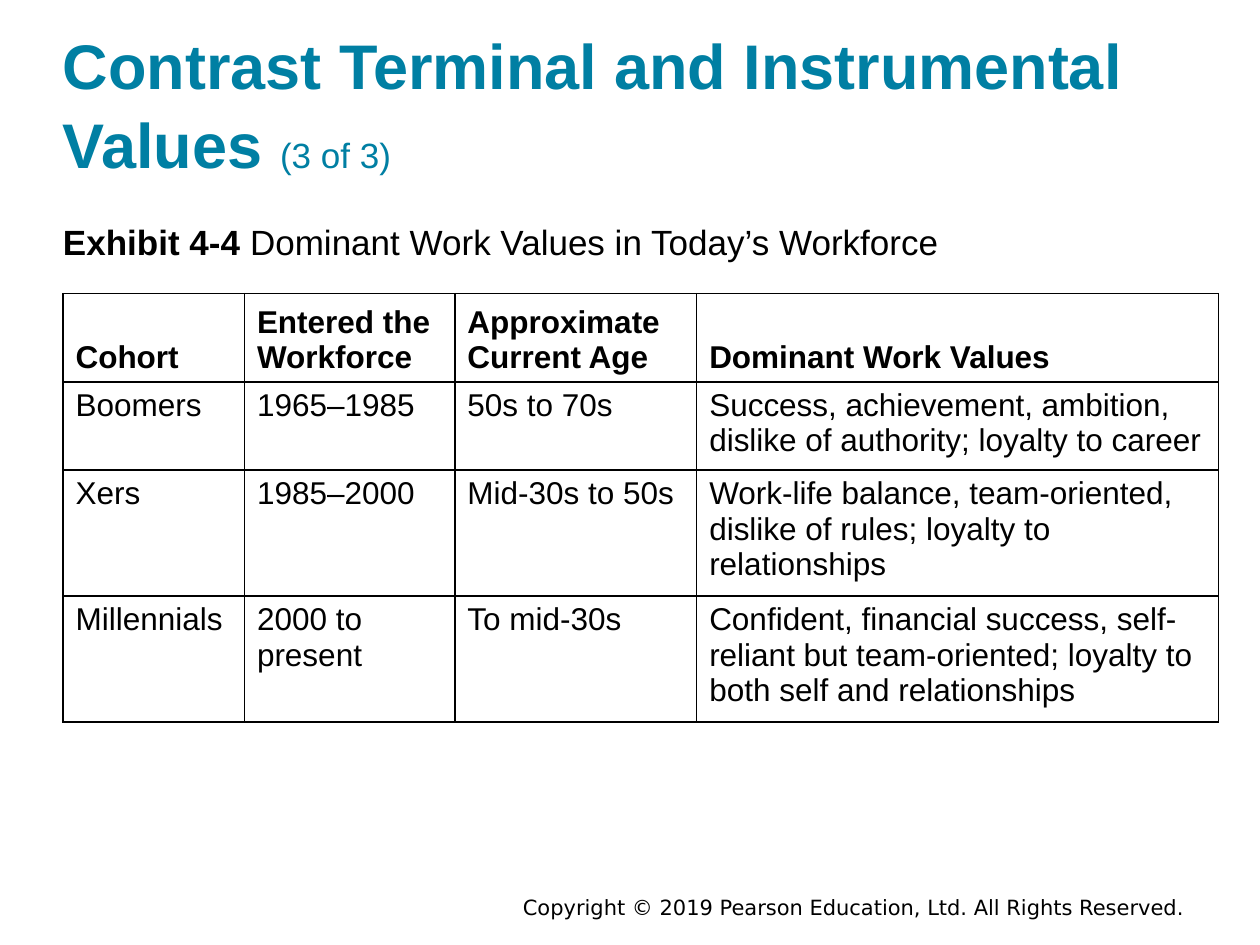
from dataclasses import dataclass

from lxml.etree import SubElement as Sub
from pptx import Presentation
from pptx.dml.color import RGBColor as Rgb
from pptx.enum.text import MSO_ANCHOR as Anchor, PP_ALIGN as Align
from pptx.oxml.ns import qn
from pptx.util import Inches, Pt

COLORS = {"title": "007FA3", "text": "000000", "border": "000000"}
COLS = (1.44, 1.67, 1.92, 4.14)
ROW = 0.41
ROWS = (
    ("Cohort", "Entered the Workforce", "Approximate Current Age",
     "Dominant Work Values"),
    ("Boomers", "1965–1985", "50s to 70s",
     "Success, achievement, ambition, dislike of authority; loyalty to career"),
    ("Xers", "1985–2000", "Mid-30s to 50s",
     "Work-life balance, team-oriented, dislike of rules; "
     "loyalty to relationships"),
    ("Millennials", "2000 to present", "To mid-30s",
     "Confident, financial success, self-reliant but team-oriented; "
     "loyalty to both self and relationships"),
)


@dataclass
class Span:
    text: str
    size: float
    bold: bool = False


@dataclass
class Block:
    box: tuple[float, float, float, float]
    spans: list[Span]
    color: str = "text"
    face: str = "Arial"
    anchor: Anchor = Anchor.TOP
    align: Align = Align.LEFT
    inset: tuple[float, float] = (0, 0)
    lead: float = 1.0


BLOCKS = (
    Block((2, 7.05, 7.5, 0.3),
          [Span("Copyright © 2019 Pearson Education, Ltd. "
                "All Rights Reserved.", 12)],
          face="DejaVu Sans", anchor=Anchor.MIDDLE, align=Align.RIGHT,
          inset=(0.1, 0.05)),
    Block((0.5, 0.24, 9, 1.2),
          [Span("Contrast Terminal and Instrumental Values ", 36, True),
           Span("(3 of 3)", 20)],
          color="title", anchor=Anchor.BOTTOM, lead=1.05),
    Block((0.5, 1.75, 9, 0.42),
          [Span("Exhibit 4-4 ", 20, True),
           Span("Dominant Work Values in Today’s Workforce", 20)]),
)


def style(font, face: str, color: str) -> None:
    font.name = face
    font.color.rgb = Rgb.from_string(COLORS[color])


def draw_block(slide, block: Block) -> None:
    frame = slide.shapes.add_textbox(*map(Inches, block.box)).text_frame
    frame.word_wrap = True
    frame.vertical_anchor = block.anchor
    side, edge = map(Inches, block.inset)
    frame.margin_left = frame.margin_right = side
    frame.margin_top = frame.margin_bottom = edge
    para = frame.paragraphs[0]
    para.alignment = block.align
    para.line_spacing = block.lead
    style(para.font, block.face, block.color)
    for span in block.spans:
        run = para.add_run()
        run.text = span.text
        run.font.size = Pt(span.size)
        run.font.bold = span.bold
        style(run.font, block.face, block.color)


def draw_cell(cell, text: str, head: bool) -> None:
    cell.text = text
    cell.vertical_anchor = Anchor.BOTTOM if head else Anchor.TOP
    font = cell.text_frame.paragraphs[0].font
    font.size = Pt(18)
    font.bold = head
    style(font, "Arial", "text")
    props = cell._tc.get_or_add_tcPr()
    for side in ("lnL", "lnR", "lnT", "lnB"):
        line = Sub(props, qn(f"a:{side}"), w=str(Pt(1)))
        fill = Sub(line, qn("a:solidFill"))
        Sub(fill, qn("a:srgbClr"), val=COLORS["border"])
    cell.fill.background()


def draw_table(slide) -> None:
    table = slide.shapes.add_table(
        len(ROWS), len(COLS), Inches(0.5), Inches(2.33),
        Inches(sum(COLS)), Inches(ROW * len(ROWS))).table
    table.horz_banding = False
    for col, width in zip(table.columns, COLS):
        col.width = Inches(width)
    for i, row in enumerate(ROWS):
        for j, text in enumerate(row):
            draw_cell(table.cell(i, j), text, head=i == 0)


def main() -> None:
    deck = Presentation()
    deck.slide_width, deck.slide_height = Inches(10), Inches(7.5)
    slide = deck.slides.add_slide(deck.slide_layouts[6])
    for block in BLOCKS:
        draw_block(slide, block)
    draw_table(slide)
    deck.save("out.pptx")


if __name__ == "__main__":
    main()
